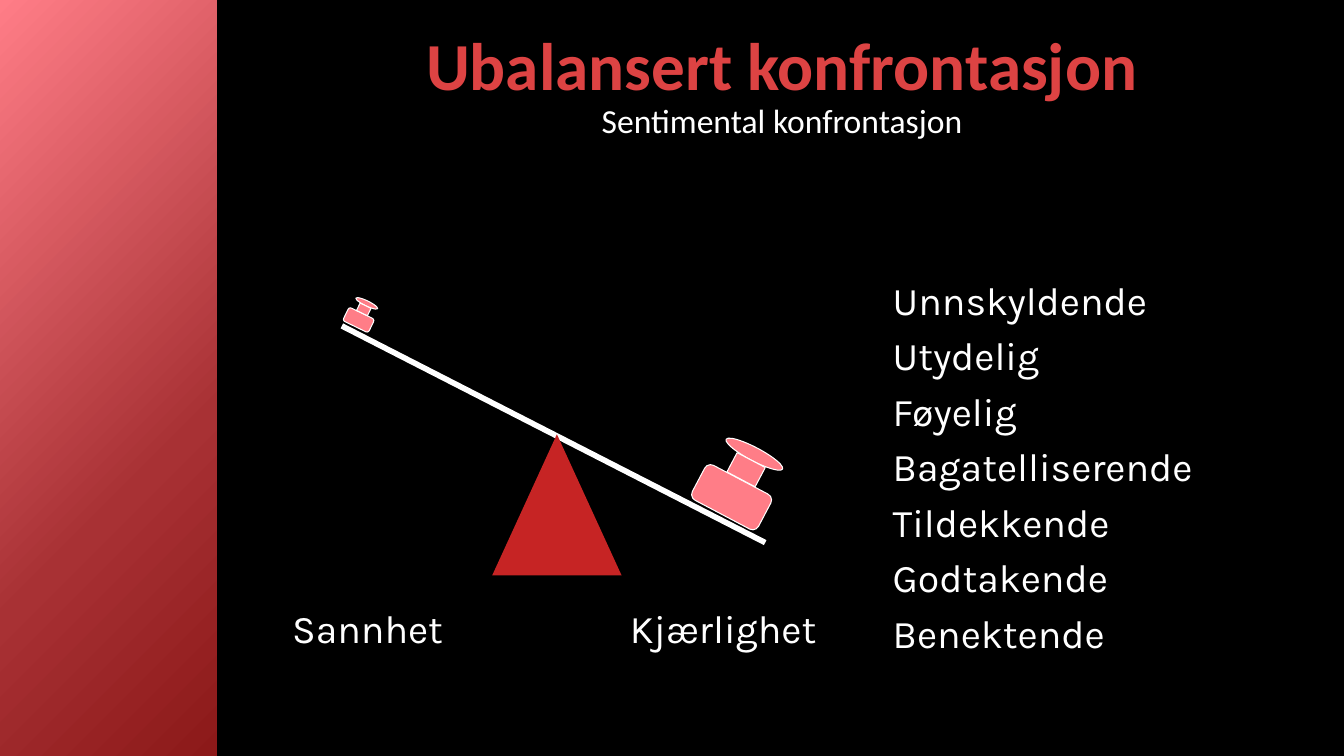
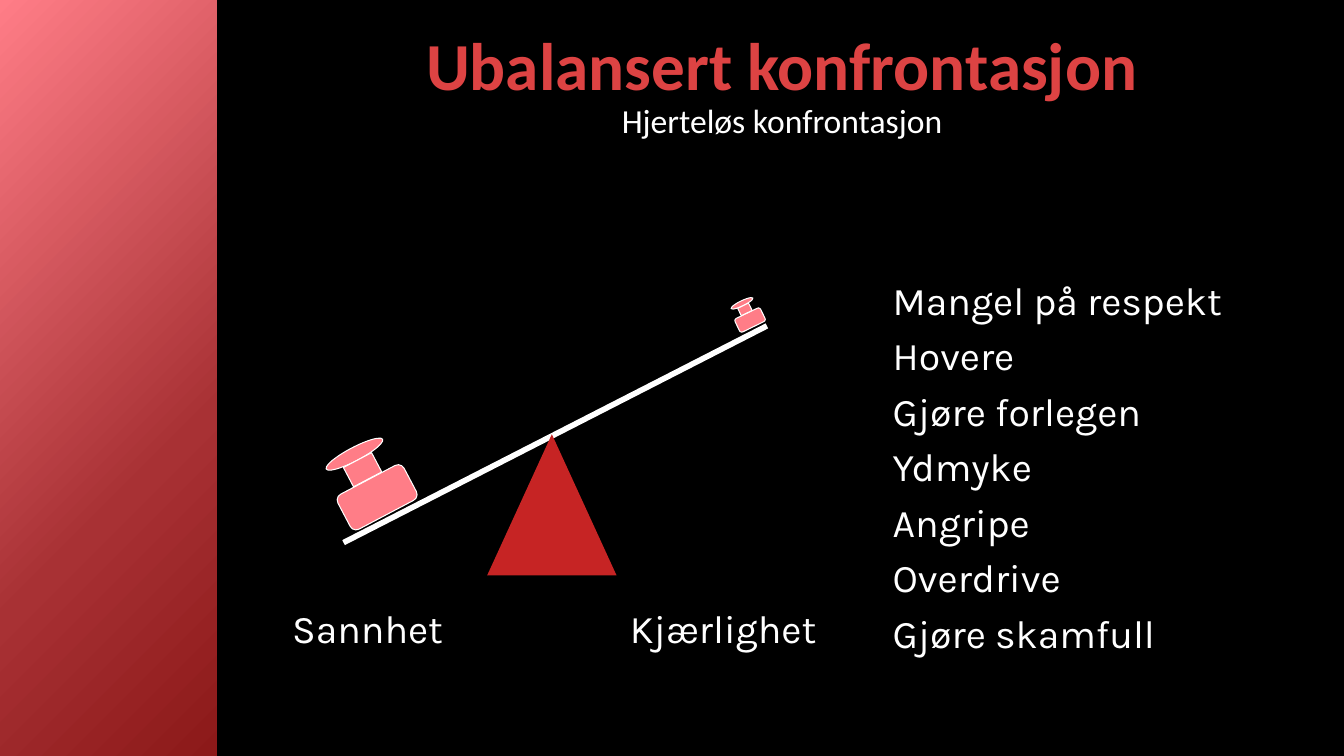
from dataclasses import dataclass
from math import cos, radians, sin

from lxml import etree
from pptx import Presentation
from pptx.dml.color import RGBColor
from pptx.enum.shapes import MSO_CONNECTOR, MSO_SHAPE
from pptx.enum.text import MSO_ANCHOR, PP_ALIGN
from pptx.oxml.ns import qn
from pptx.util import Emu, Inches, Pt

RECT, ROUND = MSO_SHAPE.RECTANGLE, MSO_SHAPE.ROUNDED_RECTANGLE
OVAL, TRIANGLE = MSO_SHAPE.OVAL, MSO_SHAPE.ISOSCELES_TRIANGLE
STRAIGHT = MSO_CONNECTOR.STRAIGHT
LEFT, CENTER = PP_ALIGN.LEFT, PP_ALIGN.CENTER
TOP, BOTTOM = MSO_ANCHOR.TOP, MSO_ANCHOR.BOTTOM

COLS, ROWS = 160, 90
W, H = Inches(COLS / 12), Inches(ROWS / 12)
CELL = W / COLS
MIRROR = 132

BLACK, WHITE = "000000", "FFFFFF"
TITLE_RED, PIVOT_RED, PINK = "DD4343", "C62424", "FF7D87"
BAND_STOPS = ((0, PINK), (64, "A83134"), (100, "8C1919"))
HEAD_FONT, BODY_FONT = "Calibri", "Karla"


@dataclass(frozen=True)
class Part:
    shape: int
    width: float
    height: float
    rise: float


@dataclass(frozen=True)
class Weight:
    x: float
    y: float
    scale: float
    tilt: float


@dataclass(frozen=True)
class Confrontation:
    subtitle: str
    traits: tuple[str, ...]
    mirrored: bool


PARTS = (Part(ROUND, 8.9, 4.7, 0), Part(OVAL, 7.6, 1.6, 5.8), Part(RECT, 3.8, 2.6, 3.7))
WEIGHTS = (Weight(42.7, 38.1, 0.38, 25.9), Weight(87.1, 59.2, 1, 27.8))

SLIDES = (
    Confrontation(
        "Sentimental konfrontasjon",
        ("Unnskyldende", "Utydelig", "Føyelig", "Bagatelliserende",
         "Tildekkende", "Godtakende", "Benektende"),
        False,
    ),
    Confrontation(
        "Hjerteløs konfrontasjon",
        ("Mangel på respekt", "Hovere", "Gjøre forlegen", "Ydmyke",
         "Angripe", "Overdrive", "Gjøre skamfull"),
        True,
    ),
)


def rgb(value: str) -> RGBColor:
    return RGBColor.from_string(value)


def cells(*values: float) -> list[Emu]:
    return [Emu(round(v * CELL)) for v in values]


def add_shape(shapes, kind, box, fill=None, line=None):
    sp = shapes.add_shape(kind, *cells(*box))
    sp.shadow.inherit = False
    if fill:
        sp.fill.solid()
        sp.fill.fore_color.rgb = rgb(fill)
    if line:
        sp.line.color.rgb = rgb(line)
        sp.line.width = Pt(0.75)
    else:
        sp.line.fill.background()
    return sp


def add_text(s, box, *lines: str, size=28, font=BODY_FONT, color=WHITE, bold=False,
             align=LEFT, anchor=TOP, leading=None, after=None, inset=None, tab=None):
    tf = s.shapes.add_textbox(*cells(*box)).text_frame
    tf.word_wrap = True
    tf.vertical_anchor = anchor
    if inset is not None:
        tf.margin_left = tf.margin_right = tf.margin_top = tf.margin_bottom = Inches(inset)
    for i, line in enumerate(lines):
        p = tf.paragraphs[0] if i == 0 else tf.add_paragraph()
        p.alignment = align
        if leading:
            p.line_spacing = leading
        if after:
            p.space_after = Pt(after)
        if tab:
            tabs = etree.SubElement(p._p.get_or_add_pPr(), qn("a:tabLst"))
            etree.SubElement(tabs, qn("a:tab"), pos=str(cells(tab)[0]), algn="l")
        r = p.add_run()
        r.text = line
        r.font.size, r.font.name, r.font.bold = Pt(size), font, bold
        r.font.color.rgb = rgb(color)


def add_band(s) -> None:
    sp = add_shape(s.shapes, RECT, (0, 0, 25.8, ROWS))
    sp.fill.gradient()
    sp.fill.gradient_angle = 315
    stops = sp._element.spPr.find(qn("a:gradFill")).find(qn("a:gsLst"))
    for old in list(stops):
        stops.remove(old)
    for share, color in BAND_STOPS:
        gs = etree.SubElement(stops, qn("a:gs"), pos=str(share * 1000))
        etree.SubElement(gs, qn("a:srgbClr"), val=color)


def add_weight(shapes, weight: Weight, mirrored: bool) -> None:
    x = MIRROR - weight.x if mirrored else weight.x
    tilt = -weight.tilt if mirrored else weight.tilt
    for part in PARTS:
        w, h, rise = (v * weight.scale for v in (part.width, part.height, part.rise))
        cx = x + rise * sin(radians(tilt))
        cy = weight.y - rise * cos(radians(tilt))
        sp = add_shape(shapes, part.shape, (cx - w / 2, cy - h / 2, w, h), PINK, WHITE)
        sp.rotation = tilt


def add_seesaw(s, mirrored: bool) -> None:
    shapes = s.shapes.add_group_shape().shapes
    start, end, pivot = (MIRROR - x if mirrored else x for x in (40.7, 91.1, 66.3))
    beam = shapes.add_connector(STRAIGHT, *cells(start, 38.8, end, 64.6))
    beam.line.color.rgb = rgb(WHITE)
    beam.line.width = Pt(4)
    etree.SubElement(beam._element.spPr, qn("a:effectLst"))
    add_shape(shapes, TRIANGLE, (pivot - 7.7, 51.7, 15.4, 16.8), PIVOT_RED)
    for weight in WEIGHTS:
        add_weight(shapes, weight, mirrored)


def add_slide(prs, content: Confrontation) -> None:
    s = prs.slides.add_slide(prs.slide_layouts[6])
    add_band(s)
    add_text(s, (28.7, 1.8, 128.8, 11.3), "Ubalansert konfrontasjon", size=48,
             font=HEAD_FONT, color=TITLE_RED, bold=True, align=CENTER,
             anchor=BOTTOM, leading=0.9)
    add_text(s, (28.7, 11.9, 128.8, 4.8), content.subtitle, size=24,
             font=HEAD_FONT, align=CENTER, leading=0.9)
    add_seesaw(s, content.mirrored)
    add_text(s, (105.8, 32.4, 45, 45.4), *content.traits, after=6, inset=0.04)
    add_text(s, (33.6, 71.3, 67, 6.8), "Sannhet\tKjærlighet", tab=40.2)


def main() -> None:
    prs = Presentation()
    prs.slide_width, prs.slide_height = W, H
    background = prs.slide_master.background.fill
    background.solid()
    background.fore_color.rgb = rgb(BLACK)
    for content in SLIDES:
        add_slide(prs, content)
    prs.save("out.pptx")


if __name__ == "__main__":
    main()
